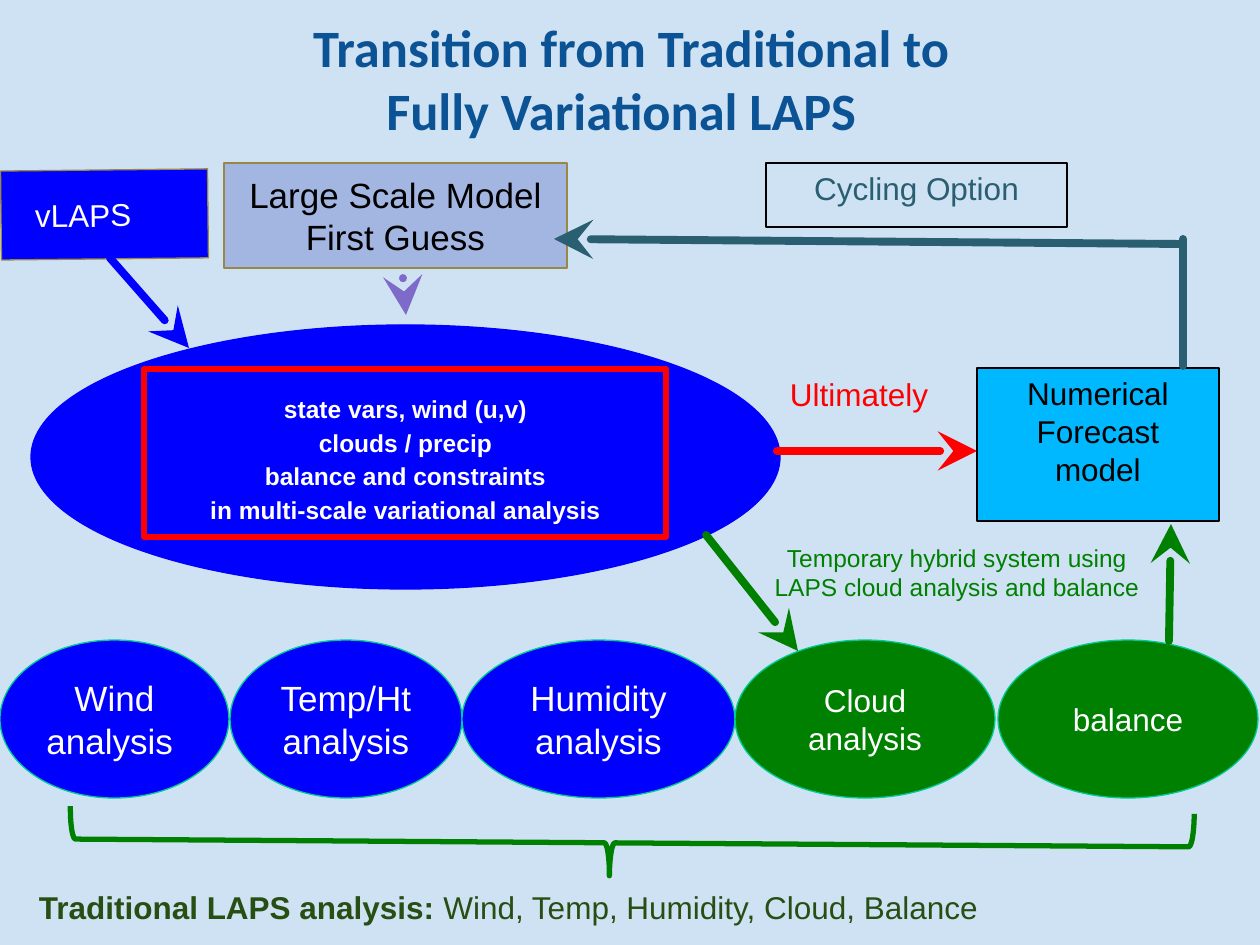
import pptx
import pptx.dml.color
import pptx.enum.shapes
import pptx.enum.text
import pptx.oxml.ns
import pptx.util
import lxml.etree

SHAPE = pptx.enum.shapes.MSO_SHAPE
ALIGN = pptx.enum.text.PP_ALIGN
ANCHOR = pptx.enum.text.MSO_ANCHOR
qn = pptx.oxml.ns.qn

SCALE = 914400 / 126
COLORS = {
    "background": "CFE2F3", "title": "0B5394", "blue": "0000FF",
    "green": "008000", "mint": "00CC98", "red": "FF0000",
    "teal": "295F71", "violet": "7E6BC9", "sky": "00B8FF",
    "periwinkle": "A3B6E2", "olive": "988848", "forest": "274E13",
    "white": "FFFFFF", "black": "000000",
}


def px(n):
    return pptx.util.Emu(round(n * SCALE))


def rgb(name):
    return pptx.dml.color.RGBColor.from_string(COLORS[name])


def write(tf, text, size=18, color="black", bold=False, font="Arial", align="CENTER",
          anchor="TOP", spacing=None, indent=0, lead="", insets=(13, 6, 13, 6)):
    tf.word_wrap = True
    tf.vertical_anchor = ANCHOR[anchor]
    tf.margin_left, tf.margin_top, tf.margin_right, tf.margin_bottom = map(px, insets)
    aligns = [align] if isinstance(align, str) else align
    for i, line in enumerate(text.split("\n")):
        p = tf.add_paragraph() if i else tf.paragraphs[0]
        p.alignment = ALIGN[aligns[min(i, len(aligns) - 1)]]
        if spacing:
            p.line_spacing = spacing
        if indent:
            p._p.get_or_add_pPr().set("indent", str(px(indent)))
        if lead:
            p.add_run().text = lead
        for j, part in enumerate(line.split("\v")):
            if j:
                p.add_line_break()
            p.add_run().text = part
        for j, r in enumerate(p.runs):
            r.font.name = font
            r.font.size = pptx.util.Pt(size)
            r.font.bold = bold or bool(lead and j == 0)
            r.font.color.rgb = rgb(color)


class Deck:
    def __init__(self, width, height):
        self.prs = pptx.Presentation()
        self.prs.slide_width, self.prs.slide_height = px(width), px(height)
        self.s = None

    def slide(self, background):
        self.s = self.prs.slides.add_slide(self.prs.slide_layouts[6])
        self.s.background.fill.solid()
        self.s.background.fill.fore_color.rgb = rgb(background)

    def text(self, at, text, **style):
        sp = self.s.shapes.add_textbox(*map(px, at))
        write(sp.text_frame, text, **style)

    def shape(self, kind, at, text="", fill=None, line="black", weight=0.75,
              rotation=0, **style):
        sp = self.s.shapes.add_shape(SHAPE[kind], *map(px, at))
        sp.shadow.inherit = False
        sp.rotation = rotation
        if fill:
            sp.fill.solid()
            sp.fill.fore_color.rgb = rgb(fill)
        else:
            sp.fill.background()
        sp.line.color.rgb = rgb(line)
        sp.line.width = pptx.util.Pt(weight)
        if text:
            write(sp.text_frame, text, **style)
        return sp

    def line(self, start, end, color, arrow=True):
        straight = pptx.enum.shapes.MSO_CONNECTOR.STRAIGHT
        sp = self.s.shapes.add_connector(straight, *map(px, start + end))
        sp.line.color.rgb = rgb(color)
        sp.line.width = pptx.util.Pt(4.5)
        ln = sp.line._get_or_add_ln()
        ln.set("cap", "rnd")
        if arrow:
            lxml.etree.SubElement(ln, qn("a:tailEnd"), type="stealth", w="lg", len="lg")
        lxml.etree.SubElement(sp._element.spPr, qn("a:effectLst"))


def main():
    deck = Deck(1260, 945)
    deck.slide("background")

    deck.text((52, 59, 1139, 82), "Transition from Traditional to \vFully Variational LAPS",
              size=30, color="title", bold=True, font="Calibri", anchor="BOTTOM",
              indent=32, insets=(0, 6, 0, 0))

    deck.shape("OVAL", (31, 325, 749, 264),
               "state vars, wind (u,v)\nclouds / precip\nbalance and constraints\n"
               "in multi-scale variational analysis",
               fill="blue", line="blue", size=14, color="white", bold=True,
               anchor="MIDDLE", spacing=1.15)

    analyses = [
        (0, 229, "Wind\nanalysis", "blue", 20, ("CENTER", "LEFT")),
        (230, 232, "Temp/Ht analysis", "blue", 20, "CENTER"),
        (462, 273, "Humidity analysis", "blue", 20, "CENTER"),
        (735, 260, "Cloud analysis", "green", 18, "CENTER"),
        (998, 260, "balance", "green", 18, "CENTER"),
    ]
    for left, width, label, fill, size, align in analyses:
        deck.shape("OVAL", (left, 640, width, 158), label, fill=fill, line="mint",
                   size=size, color="white", align=align, anchor="MIDDLE")

    deck.line((777, 451), (977, 451), "red")
    deck.line((1169, 641), (1171, 524), "green")
    deck.line((706, 535), (798, 651), "green")

    deck.text((26, 882, 988, 64), " Wind, Temp, Humidity, Cloud, Balance",
              lead="Traditional LAPS analysis:", color="forest", align="LEFT")
    deck.text((777, 369, 237, 72), "Ultimately", color="red", align="LEFT")
    deck.text((750, 537, 414, 97),
              "Temporary hybrid system using LAPS cloud analysis and balance",
              size=14, color="green")

    deck.shape("RECTANGLE", (977, 368, 242, 153), "Numerical\nForecast model", fill="sky")
    deck.shape("RECTANGLE", (224, 163, 343, 105), "Large Scale Model First Guess",
               fill="periwinkle", line="olive", size=20, anchor="MIDDLE")
    deck.line((403, 278), (406, 315), "violet")
    deck.line((1179, 244), (554, 239), "teal")
    deck.line((1183, 239), (1183, 366), "teal", arrow=False)
    deck.shape("RECTANGLE", (766, 163, 301, 64), "Cycling Option", color="teal")
    deck.shape("RECTANGLE", (144, 369, 522, 168), line="red", weight=3)

    deck.shape("RECTANGLE", (1, 170, 207, 89), "vLAPS", fill="blue", line="olive",
               rotation=-0.6, color="white", align="LEFT", anchor="MIDDLE", indent=21)
    deck.line((110, 258), (189, 348), "blue")

    brace = deck.shape("RIGHT_BRACE", (599, 281, 66, 1124), line="green", weight=3,
                       rotation=90.4)
    brace.adjustments[0], brace.adjustments[1] = 0.08, 0.52

    deck.prs.save("out.pptx")


if __name__ == "__main__":
    main()
